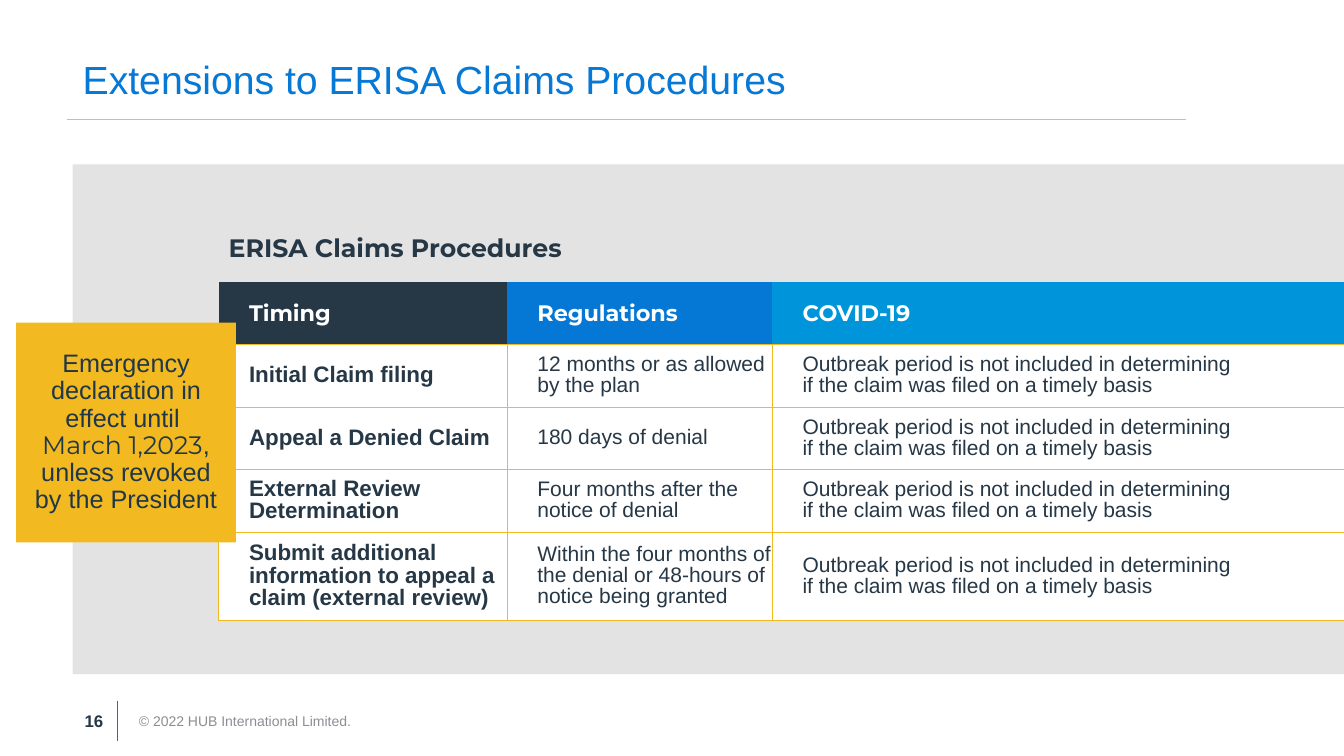
from lxml import etree
from pptx import Presentation
from pptx import util as u
from pptx.dml import color
from pptx.enum import shapes, text
from pptx.oxml import ns

NAVY, BLUE, SKY, GOLD = "263746", "0678D5", "0095DA", "F3B921"
GREY, RULE, WHITE = "E3E3E3", "BFBFBF", "FFFFFF"
LEFT, CENTER = text.PP_ALIGN.LEFT, text.PP_ALIGN.CENTER

OUTBREAK = ("Outbreak period is not included in determining \n"
            "if the claim was filed on a timely basis")
HEADINGS = [("Timing", NAVY), ("Regulations", "0578D5"), ("COVID-19", SKY)]
CLAIMS = [
    ("Initial Claim filing", "12 months or as allowed by the plan"),
    ("Appeal a Denied Claim", "180 days of denial"),
    ("External Review Determination", "Four months after the notice of denial"),
    ("Submit additional information to appeal a claim (external review)",
     "Within the four months of the denial or 48-hours of notice being granted"),
]


def rgb(value):
    """Turn a hex string into a colour."""
    return color.RGBColor.from_string(value)


def inches(*lengths):
    """Convert several lengths to inches."""
    return [u.Inches(length) for length in lengths]


def write(frame, runs, size, ink, bold=False, align=LEFT, spacing=None):
    """Fill a text frame with (words, font) runs in one paragraph."""
    frame.word_wrap = True
    frame.vertical_anchor = text.MSO_ANCHOR.MIDDLE
    paragraph = frame.paragraphs[0]
    paragraph.alignment = align
    if spacing:
        paragraph.line_spacing = spacing
    for words, font in runs:
        for index, line in enumerate(words.split("\n")):
            if index:
                paragraph.add_line_break()
            if not line:
                continue
            run = paragraph.add_run()
            run.text = line
            for name, value in {"name": font, "size": u.Pt(size), "bold": bold}.items():
                setattr(run.font, name, value)
            run.font.color.rgb = rgb(ink)


def add_label(slide, box, words, size, ink, font="Arial", bold=False):
    """Add a text box with one line of text."""
    label = slide.shapes.add_textbox(*inches(*box))
    write(label.text_frame, [(words, font)], size, ink, bold)


def add_rule(slide, start, end, ink):
    """Add a thin straight line."""
    rule = slide.shapes.add_connector(shapes.MSO_CONNECTOR.STRAIGHT, *inches(*start, *end))
    rule.line.color.rgb = rgb(ink)
    rule.line.width = u.Pt(0.5)
    etree.SubElement(rule._element.spPr, ns.qn("a:effectLst"))


def add_block(slide, box, fill):
    """Add a plain filled rectangle."""
    block = slide.shapes.add_shape(shapes.MSO_SHAPE.RECTANGLE, *inches(*box))
    block.shadow.inherit = False
    block.fill.solid()
    block.fill.fore_color.rgb = rgb(fill)
    block.line.fill.background()
    return block


def set_borders(cell, ink):
    """Give each cell edge a one point line, or none without a colour."""
    properties = cell._tc.get_or_add_tcPr()
    for index, edge in enumerate(("lnL", "lnR", "lnT", "lnB")):
        line = etree.Element(ns.qn(f"a:{edge}"), w=str(u.Pt(1)))
        fill = etree.SubElement(line, ns.qn("a:solidFill" if ink else "a:noFill"))
        if ink:
            etree.SubElement(fill, ns.qn("a:srgbClr"), val=ink)
        properties.insert(index, line)


def fill_cell(cell, words, fill, size, ink, font, bold, spacing, border):
    """Write and format one table cell."""
    margins = {"margin_left": 0.3, "margin_right": 0, "margin_top": 0.05, "margin_bottom": 0.05}
    for name, value in margins.items():
        setattr(cell, name, u.Inches(value))
    write(cell.text_frame, [(words, font)], size, ink, bold, spacing=spacing)
    cell.vertical_anchor = text.MSO_ANCHOR.MIDDLE
    cell.fill.solid()
    cell.fill.fore_color.rgb = rgb(fill)
    set_borders(cell, border)


def add_title(slide, box):
    """Place the slide title and the rule under it."""
    left, top, width, height = box
    title = slide.shapes.title
    title.left, title.top, title.width, title.height = inches(*box)
    write(title.text_frame, [("Extensions to ERISA Claims Procedures", "Arial")],
          28, BLUE, spacing=0.9)
    title.text_frame.auto_size = text.MSO_AUTO_SIZE.NONE
    add_rule(slide, (left - 0.06, top + height), (left + 11.04, top + height), RULE)


def add_claims_table(slide, box):
    """Place the claims table with its caption above."""
    left, top, width, height = box
    table = slide.shapes.add_table(len(CLAIMS) + 1, len(HEADINGS), *inches(*box)).table
    table.first_row = table.horz_banding = False
    for column, size in zip(table.columns, (2.86, 2.63, 5.68)):
        column.width = u.Inches(size)
    for row, size in zip(table.rows, (0.62, 0.62, 0.62, 0.62, 0.88)):
        row.height = u.Inches(size)
    for column, (heading, fill) in enumerate(HEADINGS):
        fill_cell(table.cell(0, column), heading, fill, 16, WHITE, "Montserrat", True, None, None)
    for row, claim in enumerate(CLAIMS, 1):
        for column, words in enumerate((*claim, OUTBREAK)):
            first = column == 0
            fill_cell(table.cell(row, column), words, WHITE, 16 if first else 15,
                      NAVY, "Arial", first, 0.9, GOLD)
    add_label(slide, (left, top - 0.55, 5.04, 0.4), "ERISA Claims Procedures",
              18, NAVY, "Montserrat", True)


def add_declaration(slide, box):
    """Place the gold note about the emergency declaration."""
    note = add_block(slide, box, GOLD)
    write(note.text_frame,
          [("Emergency declaration in effect until \n", "Arial"),
           ("March 1,2023", "Montserrat"),
           (", unless revoked by the President", "Arial")],
          18, "203747", align=CENTER, spacing=0.9)


def add_footer(slide, box):
    """Place the page number, divider and copyright line."""
    left, top, width, height = box
    divider = left + 0.42
    add_rule(slide, (divider, top), (divider, top + height), BLUE)
    add_label(slide, (left + 0.54, top, width - 0.54, height),
              "© 2022 HUB International Limited.", 10, "8D8D94")
    add_label(slide, (left, top, 0.51, height), "16", 12, NAVY, bold=True)


def main():
    """Build the slide and save it."""
    deck = Presentation()
    deck.slide_width, deck.slide_height = inches(13.33, 7.5)
    slide = deck.slides.add_slide(deck.slide_layouts[5])
    add_footer(slide, (0.74, 6.95, 5.04, 0.4))
    add_block(slide, (0.72, 1.63, 12.61, 5.06), GREY)
    add_title(slide, (0.72, 0.45, 11.52, 0.73))
    add_claims_table(slide, (2.17, 2.8, 11.17, 3.36))
    add_declaration(slide, (0.16, 3.2, 2.18, 2.18))
    deck.save("out.pptx")


if __name__ == "__main__":
    main()
